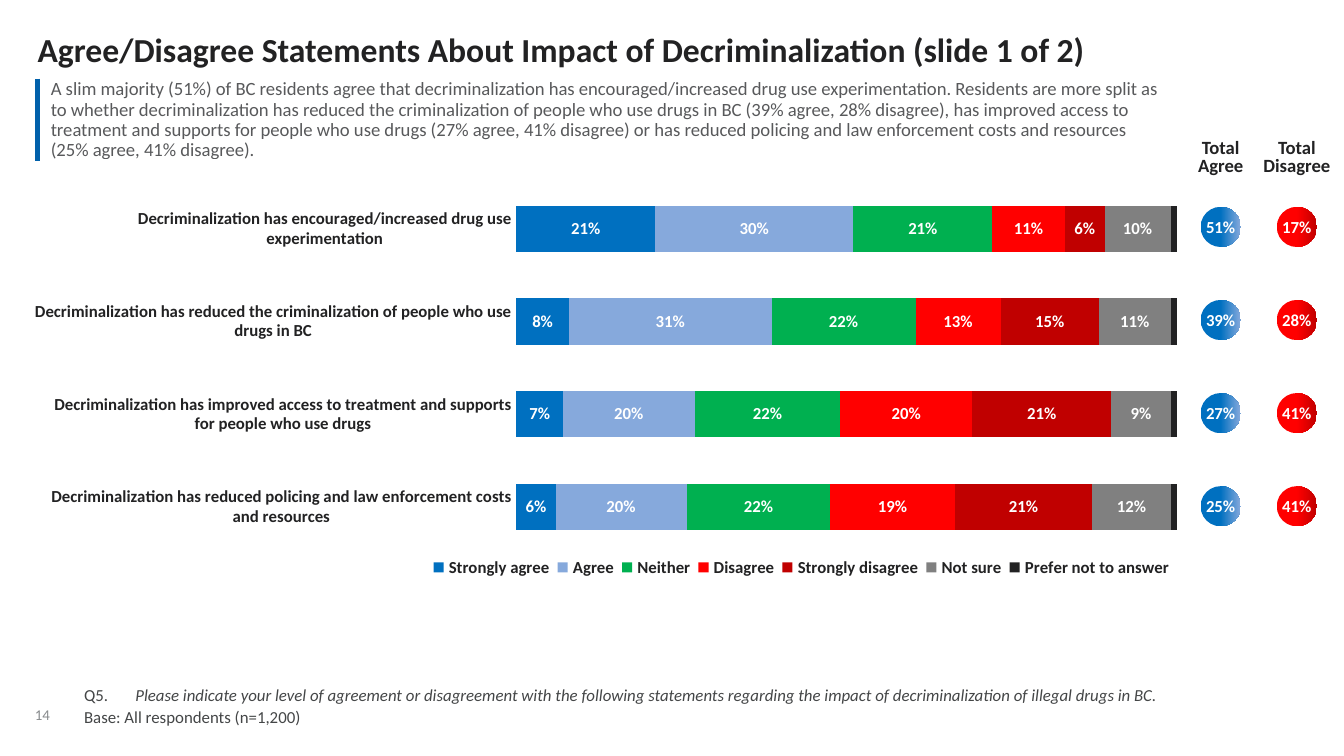
from collections import namedtuple

from lxml import etree
from pptx import Presentation
from pptx.chart.data import CategoryChartData
from pptx.dml.color import RGBColor
from pptx.enum.chart import XL_CHART_TYPE as ChartType, XL_LABEL_POSITION as LabelPosition
from pptx.enum.chart import XL_LEGEND_POSITION as LegendPosition, XL_TICK_LABEL_POSITION as TickLabels
from pptx.enum.chart import XL_TICK_MARK as TickMark
from pptx.enum.shapes import MSO_SHAPE as Shape
from pptx.enum.text import MSO_ANCHOR as Anchor, PP_ALIGN as Align
from pptx.oxml import parse_xml
from pptx.oxml.ns import nsdecls, qn
from pptx.util import Cm, Pt

Box = namedtuple("Box", "left top width height")

FONT = "Calibri"
DARK, WHITE, BLUE, LIGHT_BLUE, RED, DARK_RED = "222223", "FFFFFF", "0070C0", "86A9DC", "FF0000", "C00000"

TITLE = "Agree/Disagree Statements About Impact of Decriminalization (slide 1 of 2)"
SUMMARY = (
    "A slim majority (51%) of BC residents agree that decriminalization has encouraged/increased drug use "
    "experimentation. Residents are more split as to whether decriminalization has reduced the criminalization "
    "of people who use drugs in BC (39% agree, 28% disagree), has improved access to treatment and supports for "
    "people who use drugs (27% agree, 41% disagree) or has reduced policing and law enforcement costs and "
    "resources (25% agree, 41% disagree)."
)
QUESTION = (
    "Please indicate your level of agreement or disagreement with the following statements "
    "regarding the impact of decriminalization of illegal drugs in BC."
)
STATEMENTS = [
    "Decriminalization has encouraged/increased drug use experimentation",
    "Decriminalization has reduced the criminalization of people who use drugs in BC",
    "Decriminalization has improved access to treatment and supports for people who use drugs",
    "Decriminalization has reduced policing and law enforcement costs and resources",
]
ANSWERS = [
    ("Strongly agree", BLUE, (0.21, 0.08, 0.07, 0.06)),
    ("Agree", LIGHT_BLUE, (0.3, 0.31, 0.2, 0.2)),
    ("Neither", "00B050", (0.21, 0.22, 0.22, 0.22)),
    ("Disagree", RED, (0.11, 0.13, 0.2, 0.19)),
    ("Strongly disagree", DARK_RED, (0.06, 0.15, 0.21, 0.21)),
    ("Not sure", "808080", (0.1, 0.11, 0.09, 0.12)),
    ("Prefer not to answer", DARK, (0.01, 0.01, 0.01, 0.01)),
]
TOTALS = [
    (22.37, "Agree", (BLUE, LIGHT_BLUE), ("51%", "39%", "27%", "25%")),
    (23.81, "Disagree", (RED, DARK_RED), ("17%", "28%", "41%", "41%")),
]


def color(hex_string):
    return RGBColor.from_string(hex_string)


def set_all(target, **values):
    for name, value in values.items():
        setattr(target, name, value)


def set_font(font, size, hex_string, bold=False, italic=False):
    set_all(font, name=FONT, size=Pt(size), bold=bold, italic=italic)
    font.color.rgb = color(hex_string)


def set_frame(frame, wrap=True, anchor=Anchor.TOP):
    set_all(frame, margin_left=0, margin_top=0, margin_right=0, margin_bottom=0,
            word_wrap=wrap, vertical_anchor=anchor)


def write(paragraph, text, size, hex_string, bold=False, italic=False, **layout):
    run = paragraph.add_run()
    run.text = text
    set_font(run.font, size, hex_string, bold, italic)
    set_all(paragraph, **layout)


def add_text_frame(slide, box, **options):
    frame = slide.shapes.add_textbox(*map(Cm, box)).text_frame
    set_frame(frame, **options)
    return frame


def add_title(slide, box):
    frame = add_text_frame(slide, box)
    write(frame.paragraphs[0], TITLE, 18, DARK, bold=True, line_spacing=0.9)


def add_summary(slide, box):
    """Single-cell table with a blue rule on its left."""
    table = slide.shapes.add_table(1, 1, *map(Cm, box)).table
    set_all(table, first_row=False, horz_banding=False)
    cell = table.cell(0, 0)
    set_all(cell, margin_left=Cm(0.25), margin_right=Cm(0.25), margin_top=0, margin_bottom=0,
            vertical_anchor=Anchor.MIDDLE)
    cell.fill.background()
    borders = [("lnL", "0161AB", 3), ("lnR", WHITE, 1)]
    for index, (side, hex_string, width) in enumerate(borders):
        cell._tc.get_or_add_tcPr().insert(index, parse_xml(
            f'<a:{side} {nsdecls("a")} w="{Pt(width)}"><a:solidFill>'
            f'<a:srgbClr val="{hex_string}"/></a:solidFill></a:{side}>'))
    write(cell.text_frame.paragraphs[0], SUMMARY, 10, "58595B", line_spacing=0.9, space_after=Pt(3))


def set_manual_layout(element, **fractions):
    """Place a chart part by fractions of the chart area."""
    layout = element.find(qn("c:layout"))
    if layout is None:
        layout = parse_xml(f'<c:layout {nsdecls("c")}/>')
        position = element.find(qn("c:legendPos"))
        element.insert(0 if position is None else element.index(position) + 1, layout)
    for child in list(layout):
        layout.remove(child)
    manual = etree.SubElement(layout, qn("c:manualLayout"))
    if element.tag == qn("c:plotArea"):
        etree.SubElement(manual, qn("c:layoutTarget"), val="inner")
    for mode in ("xMode", "yMode"):
        etree.SubElement(manual, qn(f"c:{mode}"), val="edge")
    for name, value in fractions.items():
        etree.SubElement(manual, qn(f"c:{name}"), val=str(value))


def add_answer_chart(slide, box):
    data = CategoryChartData(number_format="0%")
    data.categories = STATEMENTS
    for name, _, values in ANSWERS:
        data.add_series(name, values)
    chart = slide.shapes.add_chart(ChartType.BAR_STACKED_100, *map(Cm, box), data).chart
    set_font(chart.font, 9, DARK, bold=True)
    set_all(chart, has_title=False, has_legend=True)
    set_all(chart.legend, position=LegendPosition.BOTTOM, include_in_layout=False)
    plot = chart.plots[0]
    set_all(plot, gap_width=100, overlap=100, vary_by_categories=False)

    tick_free = {"major_tick_mark": TickMark.NONE, "minor_tick_mark": TickMark.NONE,
                 "has_major_gridlines": False}
    for axis in (chart.category_axis, chart.value_axis):
        set_all(axis, **tick_free)
        axis.format.line.fill.background()
    chart.category_axis.reverse_order = True
    set_all(chart.value_axis, minimum_scale=0, maximum_scale=1, major_unit=0.2,
            tick_label_position=TickLabels.NONE)

    for series, (name, hex_string, _) in zip(plot.series, ANSWERS):
        series.format.fill.solid()
        series.format.fill.fore_color.rgb = color(hex_string)
        if name != "Prefer not to answer":
            labels = series.data_labels
            set_all(labels, show_value=True, number_format="0%", number_format_is_linked=False,
                    position=LabelPosition.CENTER)
            set_font(labels.font, 9, WHITE, bold=True)
    set_manual_layout(chart._chartSpace.chart.plotArea, x=0.42, y=0, w=0.58, h=0.92)
    set_manual_layout(chart.legend._element, x=0.34, y=0.92, w=0.66, h=0.07)


def add_total_column(slide, box, heading, gradient, totals):
    """Two-line heading above one gradient circle for each statement."""
    frame = add_text_frame(slide, Box(box.left, box.top, box.width, 0.69), wrap=False)
    for paragraph, line in zip((frame.paragraphs[0], frame.add_paragraph()), ("Total", heading)):
        write(paragraph, line, 10, DARK, bold=True, alignment=Align.CENTER, line_spacing=0.8)
    diameter, first_circle = 0.76, 1.26
    left = box.left + (box.width - diameter) / 2
    step = (box.height - first_circle - diameter) / (len(totals) - 1)
    for row, total in enumerate(totals):
        top = box.top + first_circle + row * step
        circle = slide.shapes.add_shape(Shape.OVAL, *map(Cm, (left, top, diameter, diameter)))
        circle.shadow.inherit = False
        circle.line.fill.background()
        circle.fill.gradient()
        circle.fill.gradient_angle = 0
        for stop, position, hex_string in zip(circle.fill.gradient_stops, (0.5, 1), gradient):
            stop.position = position
            stop.color.rgb = color(hex_string)
        set_frame(circle.text_frame, wrap=False, anchor=Anchor.MIDDLE)
        write(circle.text_frame.paragraphs[0], total, 9, WHITE, bold=True, alignment=Align.CENTER)


def add_footnote(slide, box):
    frame = add_text_frame(slide, box, anchor=Anchor.BOTTOM)
    question, base = frame.paragraphs[0], frame.add_paragraph()
    for paragraph in (question, base):
        properties = paragraph._p.get_or_add_pPr()
        properties.set("marL", str(Cm(0.97)))
        properties.set("indent", str(-Cm(0.97)))
        set_all(paragraph, line_spacing=0.9, space_after=Pt(2))
    write(question, "Q5.\t", 9, "444647")
    write(question, QUESTION, 9, "444647", italic=True)
    write(base, "Base: All respondents (n=1,200)", 9, "444647")


def add_slide_number(slide, box):
    frame = add_text_frame(slide, box, wrap=False, anchor=Anchor.BOTTOM)
    write(frame.paragraphs[0], "14", 8, "888B8D", line_spacing=0.85)


def main():
    presentation = Presentation()
    set_all(presentation, slide_width=Cm(25.4), slide_height=Cm(14.29))
    slide = presentation.slides.add_slide(presentation.slide_layouts[6])
    add_slide_number(slide, Box(0.66, 13.02, 0.86, 0.66))
    add_title(slide, Box(0.71, 0.63, 24.03, 0.69))
    add_footnote(slide, Box(1.59, 12.94, 21.34, 0.8))
    add_summary(slide, Box(0.71, 1.5, 21.51, 1.52))
    add_answer_chart(slide, Box(0.66, 3.45, 21.59, 7.62))
    for left, heading, gradient, totals in TOTALS:
        add_total_column(slide, Box(left, 2.65, 1.4, 7.3), heading, gradient, totals)
    presentation.save("out.pptx")


if __name__ == "__main__":
    main()
